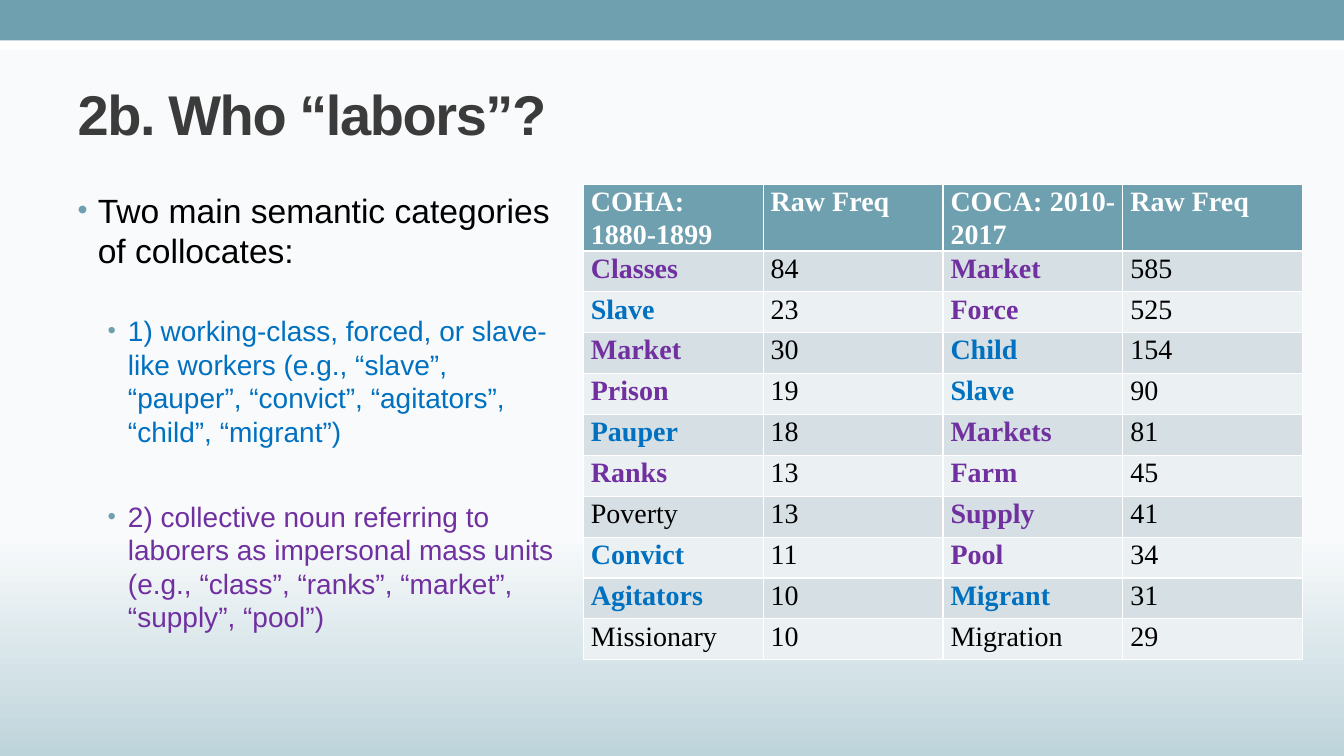
from lxml.etree import SubElement
from pptx import Presentation
from pptx.dml.color import RGBColor
from pptx.enum.shapes import MSO_SHAPE
from pptx.enum.text import MSO_ANCHOR, MSO_AUTO_SIZE, PP_ALIGN
from pptx.oxml.ns import qn
from pptx.util import Cm, Pt

COLORS = {
    "teal": "6EA0B0", "white": "FFFFFF", "title": "3B3B3B", "black": "000000",
    "worker": "0070C0", "mass": "7030A0", "odd": "D5DFE4", "even": "EBF0F2",
    "sky": "F8FAFB", "ground": "BED4DB",
}
TITLE = "2b. Who “labors”?"
BULLETS = [
    (0, 24, 4.8, "black", "Two main semantic categories of collocates:"),
    (1, 20, 31, "worker", "1) working-class, forced, or slave-like workers (e.g., “slave”, "
     "“pauper”, “convict”, “agitators”, “child”, “migrant”)"),
    (1, 20, 36.4, "mass", "2) collective noun referring to laborers as impersonal mass units "
     "(e.g., “class”, “ranks”, “market”, “supply”, “pool”)"),
]
INDENTS = [0.51, 1.27]
HEADER = ("COHA: 1880-1899", "Raw Freq", "COCA: 2010-2017", "Raw Freq")
COLLOCATES = [
    ("Classes", "84", "Market", "585"),
    ("Slave", "23", "Force", "525"),
    ("Market", "30", "Child", "154"),
    ("Prison", "19", "Slave", "90"),
    ("Pauper", "18", "Markets", "81"),
    ("Ranks", "13", "Farm", "45"),
    ("Poverty", "13", "Supply", "41"),
    ("Convict", "11", "Pool", "34"),
    ("Agitators", "10", "Migrant", "31"),
    ("Missionary", "10", "Migration", "29"),
]
CATEGORIES = {
    "worker": {"Slave", "Pauper", "Convict", "Agitators", "Child", "Migrant"},
    "mass": {"Classes", "Market", "Prison", "Ranks", "Force", "Markets", "Farm", "Supply", "Pool"},
}
BARS = [(0.61, 0.64, "white"), (0, 1.02, "teal")]
SLIDE_WIDTH, SLIDE_HEIGHT = 33.87, 19.05
ROW_HEIGHT = 1.03


def rgb(name):
    return RGBColor.from_string(COLORS[name])


def add_run(paragraph, text, size, color, font="Arial", bold=False):
    run = paragraph.add_run()
    run.text = text
    run.font.name = font
    run.font.size = Pt(size)
    run.font.bold = bold
    run.font.color.rgb = rgb(color)
    return run


def place(shape, left, top, width, height):
    shape.left, shape.top = Cm(left), Cm(top)
    shape.width, shape.height = Cm(width), Cm(height)


def set_bullet(paragraph, indent):
    properties = paragraph._p.get_or_add_pPr()
    properties.set("marL", str(Cm(indent)))
    properties.set("indent", str(-Cm(INDENTS[0])))
    color = SubElement(properties, qn("a:buClr"))
    SubElement(color, qn("a:srgbClr"), val=COLORS["teal"])
    SubElement(properties, qn("a:buSzPct"), val="85000")
    SubElement(properties, qn("a:buFont"), typeface="Arial")
    SubElement(properties, qn("a:buChar"), char="•")


def add_background(slide):
    fill = slide.background.fill
    fill.gradient()
    fill.gradient_angle = 270
    for stop, position, color in zip(fill.gradient_stops, (0.71, 1), ("sky", "ground")):
        stop.position = position
        stop.color.rgb = rgb(color)
    for top, height, color in BARS:
        bar = slide.shapes.add_shape(MSO_SHAPE.RECTANGLE, 0, Cm(top), Cm(SLIDE_WIDTH), Cm(height))
        bar.shadow.inherit = False
        bar.fill.solid()
        bar.fill.fore_color.rgb = rgb(color)
        bar.line.fill.background()


def fill_title(title):
    place(title, 1.7, 1.47, 30.48, 2.74)
    frame = title.text_frame
    frame.auto_size = MSO_AUTO_SIZE.NONE
    frame.vertical_anchor = MSO_ANCHOR.MIDDLE
    paragraph = frame.paragraphs[0]
    paragraph.alignment = PP_ALIGN.LEFT
    run = add_run(paragraph, TITLE, 40, "title", bold=True)
    run.font._element.set("spc", "-100")


def fill_body(body):
    place(body, 1.7, 4.65, 12.67, 13.11)
    frame = body.text_frame
    frame.auto_size = MSO_AUTO_SIZE.NONE
    for index, (level, size, gap, color, text) in enumerate(BULLETS):
        paragraph = frame.add_paragraph() if index else frame.paragraphs[0]
        paragraph.level = level
        paragraph.space_before = Pt(gap)
        set_bullet(paragraph, INDENTS[level])
        add_run(paragraph, text, size, color)


def fill_cell(cell, text, fill, color, bold):
    cell.margin_left = cell.margin_right = Cm(0.19)
    cell.margin_top = cell.margin_bottom = 0
    cell.fill.solid()
    cell.fill.fore_color.rgb = rgb(fill)
    paragraph = cell.text_frame.paragraphs[0]
    paragraph.alignment = PP_ALIGN.JUSTIFY
    paragraph.line_spacing = 1.07
    add_run(paragraph, text, 20, color, "Times New Roman", bold)


def add_collocate_table(slide):
    rows = [HEADER, *COLLOCATES]
    frame = slide.shapes.add_table(len(rows), len(HEADER), Cm(14.7), Cm(4.65),
                                   Cm(18.13), Cm(ROW_HEIGHT * len(rows)))
    table = frame.table
    for row_index, row in enumerate(rows):
        table.rows[row_index].height = Cm(ROW_HEIGHT)
        for column_index, text in enumerate(row):
            if row_index == 0:
                fill, color = "teal", "white"
            else:
                fill = "odd" if row_index % 2 else "even"
                color = next((name for name, words in CATEGORIES.items() if text in words), "black")
            fill_cell(table.cell(row_index, column_index), text, fill, color, color != "black")


def main():
    presentation = Presentation()
    presentation.slide_width, presentation.slide_height = Cm(SLIDE_WIDTH), Cm(SLIDE_HEIGHT)
    slide = presentation.slides.add_slide(presentation.slide_layouts[1])
    add_background(slide)
    fill_title(slide.shapes.title)
    fill_body(slide.placeholders[1])
    add_collocate_table(slide)
    presentation.save("out.pptx")


if __name__ == "__main__":
    main()
